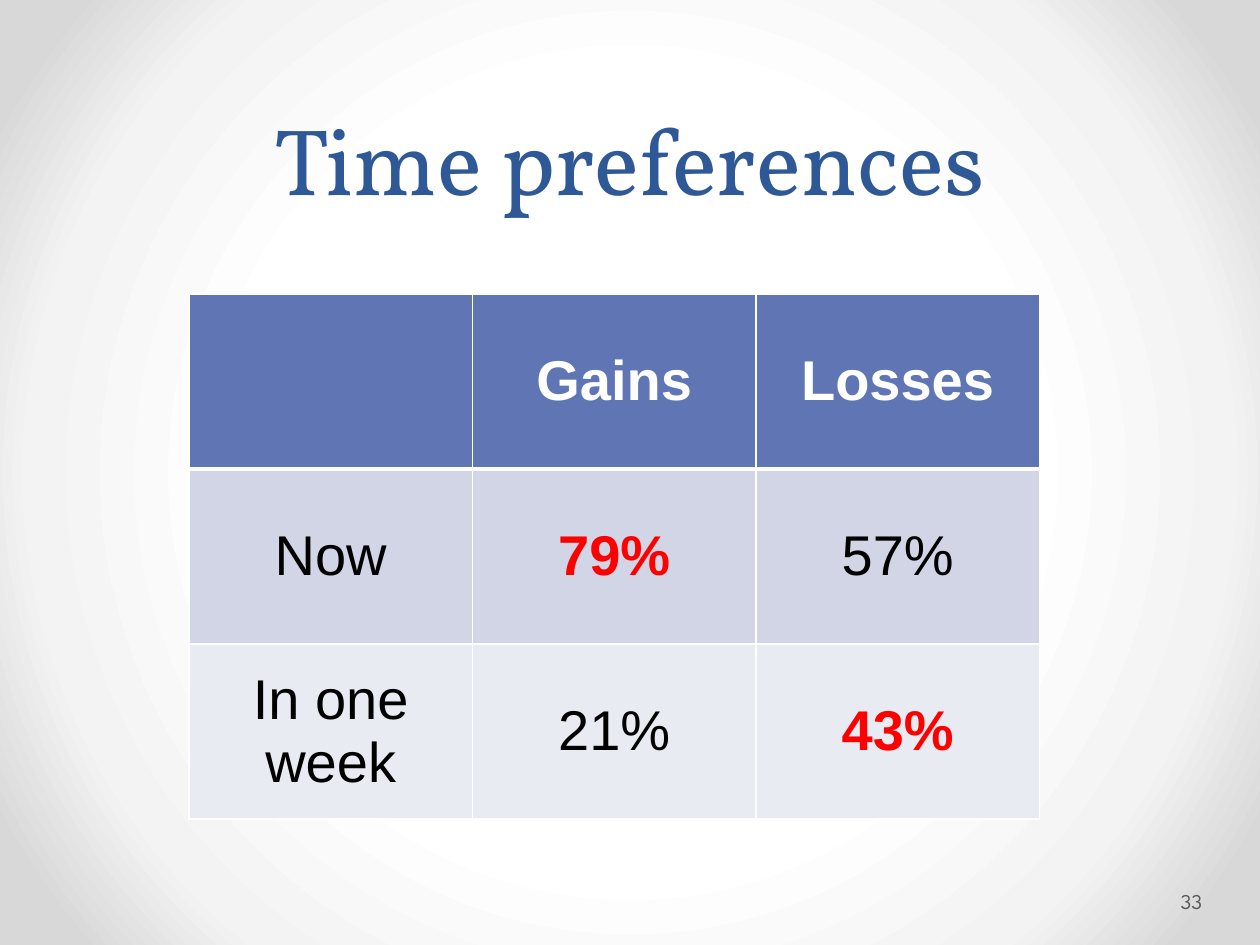
from pptx import Presentation
from pptx.dml.color import RGBColor
from pptx.enum.text import MSO_ANCHOR as Anchor, PP_ALIGN as Align
from pptx.oxml import parse_xml
from pptx.oxml.ns import nsdecls
from pptx.util import Pt

TITLE_BLUE = RGBColor(0x2F, 0x58, 0x97)
HEADER_BLUE = RGBColor(0x60, 0x76, 0xB4)
BAND_DARK = RGBColor(0xD1, 0xD5, 0xE5)
BAND_LIGHT = RGBColor(0xE9, 0xEB, 0xF2)
WHITE = RGBColor(0xFF, 0xFF, 0xFF)
BLACK = RGBColor(0x00, 0x00, 0x00)
RED = RGBColor(0xFF, 0x00, 0x00)
GREY = RGBColor(0x59, 0x59, 0x59)
PALE_GREY = RGBColor(0xF3, 0xF3, 0xF3)
EDGE_GREY = RGBColor(0xD8, 0xD8, 0xD8)


def write_text(tf, text, font, size, color, bold=False, align=Align.LEFT, spacing=None):
    p = tf.paragraphs[0]
    p.alignment = align
    p.line_spacing = spacing
    r = p.add_run()
    r.text = text
    r.font.name = font
    r.font.size = Pt(size)
    r.font.bold = bold
    r.font.color.rgb = color


def set_borders(cell, top, bottom):
    """Draw white borders, 1 pt at the sides and the given widths above and below."""
    tcPr = cell._tc.get_or_add_tcPr()
    widths = {"lnL": 1, "lnR": 1, "lnT": top, "lnB": bottom}
    for i, (tag, width) in enumerate(widths.items()):
        tcPr.insert(i, parse_xml(
            f'<a:{tag} {nsdecls("a")} w="{Pt(width)}"><a:solidFill>'
            f'<a:srgbClr val="{WHITE}"/></a:solidFill></a:{tag}>'))


prs = Presentation()
prs.slide_width, prs.slide_height = Pt(720), Pt(540)
slide = prs.slides.add_slide(prs.slide_layouts[6])

# Radial background
stops = [(0, WHITE), (50, WHITE), (76, PALE_GREY), (92, EDGE_GREY), (100, EDGE_GREY)]
stop_xml = "".join(
    f'<a:gs pos="{pos * 1000}"><a:srgbClr val="{color}"/></a:gs>' for pos, color in stops)
slide.element.cSld.insert(0, parse_xml(
    f'<p:bg {nsdecls("p", "a")}><p:bgPr><a:gradFill rotWithShape="1">'
    f'<a:gsLst>{stop_xml}</a:gsLst><a:path path="circle">'
    '<a:fillToRect l="50000" t="50000" r="50000" b="50000"/></a:path>'
    '</a:gradFill><a:effectLst/></p:bgPr></p:bg>'))

# Title
tf = slide.shapes.add_textbox(Pt(36), Pt(0), Pt(648), Pt(126)).text_frame
tf.word_wrap = True
tf.vertical_anchor = Anchor.BOTTOM
write_text(tf, "Time preferences", "Vollkorn", 54, TITLE_BLUE,
           align=Align.CENTER, spacing=1.07)

# Table of choices
rows = [["", "Gains", "Losses"], ["Now", "79%", "57%"], ["In one week", "21%", "43%"]]
row_fills = [HEADER_BLUE, BAND_DARK, BAND_LIGHT]
highlights = {"79%", "43%"}
table = slide.shapes.add_table(3, 3, Pt(108), Pt(168), Pt(486), Pt(300)).table
for column in table.columns:
    column.width = Pt(162)
for row in table.rows:
    row.height = Pt(100)

for i, (texts, fill) in enumerate(zip(rows, row_fills)):
    for j, text in enumerate(texts):
        cell = table.cell(i, j)
        cell.vertical_anchor = Anchor.MIDDLE
        cell.fill.solid()
        cell.fill.fore_color.rgb = fill
        set_borders(cell, top=3 if i == 1 else 1, bottom=3 if i == 0 else 1)
        if text:
            color = WHITE if i == 0 else RED if text in highlights else BLACK
            write_text(cell.text_frame, text, "Arial", 32, color,
                       bold=color != BLACK, align=Align.CENTER)

# Slide number
tf = slide.shapes.add_textbox(Pt(672.5), Pt(500.5), Pt(44), Pt(28.8)).text_frame
tf.word_wrap = True
tf.vertical_anchor = Anchor.MIDDLE
tf.margin_left, tf.margin_right = Pt(2.16), Pt(3.6)
write_text(tf, "33", "League Spartan", 12, GREY)

prs.save("out.pptx")
